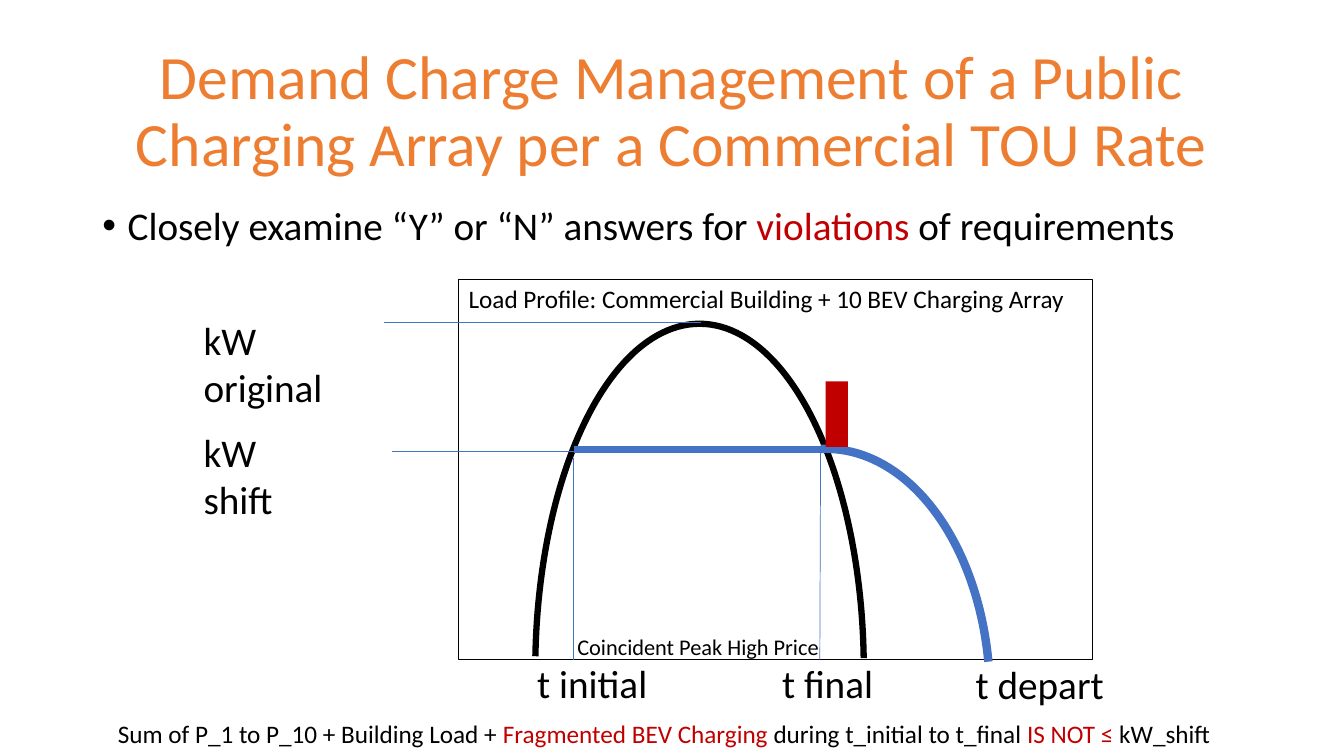
from collections import namedtuple
from lxml.etree import SubElement
from pptx import Presentation
from pptx.dml.color import RGBColor
from pptx.enum.shapes import MSO_CONNECTOR as CONNECTOR, MSO_SHAPE as SHAPE
from pptx.enum.text import MSO_ANCHOR as ANCHOR, PP_ALIGN as ALIGN
from pptx.oxml.ns import qn
from pptx.util import Cm, Pt

BLACK = RGBColor(0x00, 0x00, 0x00)
ORANGE = RGBColor(0xED, 0x7D, 0x31)
RED = RGBColor(0xC0, 0x00, 0x00)
BLUE = RGBColor(0x44, 0x72, 0xC4)

Box = namedtuple("Box", "left top width height")


def inside(box, left, top, width, height):
    return Box(box.left + left, box.top + top, width, height)


def lengths(values):
    return [Cm(value) for value in values]


def set_format(target, values):
    for name, value in values.items():
        setattr(target, name, value)


def add_text(slide, box, runs, size, wrap=True, anchor=ANCHOR.TOP, **paragraph_format):
    frame = slide.shapes.add_textbox(*lengths(box)).text_frame
    set_format(frame, {"word_wrap": wrap, "vertical_anchor": anchor})
    paragraph = frame.paragraphs[0]
    set_format(paragraph, paragraph_format)
    for text, color in runs:
        run = paragraph.add_run()
        run.text = text
        set_format(run.font, {"name": "Calibri", "size": Pt(size)})
        run.font.color.rgb = color
    return paragraph


def add_figure(slide, kind, box, line=None, weight=0, fill=None, angles=()):
    shape = slide.shapes.add_shape(kind, *lengths(box))
    shape.shadow.inherit = False
    for index, angle in enumerate(angles):
        shape.adjustments[index] = angle
    if fill is None:
        shape.fill.background()
    else:
        shape.fill.solid()
        shape.fill.fore_color.rgb = fill
    if line is None:
        shape.line.fill.background()
    else:
        shape.line.color.rgb = line
        shape.line.width = Pt(weight)


def add_line(slide, box, start, end, weight):
    points = [box.left + start[0], box.top + start[1], box.left + end[0], box.top + end[1]]
    connector = slide.shapes.add_connector(CONNECTOR.STRAIGHT, *lengths(points))
    connector.line.color.rgb = BLUE
    connector.line.width = Pt(weight)
    SubElement(connector._element.spPr, qn("a:effectLst"))


def add_title(slide, box):
    title = "Demand Charge Management of a Public Charging Array per a Commercial TOU Rate"
    add_text(slide, box, [(title, ORANGE)], 44, anchor=ANCHOR.MIDDLE,
             alignment=ALIGN.CENTER, line_spacing=0.9)


def add_bullet(slide, box):
    runs = [("Closely examine “Y” or “N” answers for ", BLACK),
            ("violations", RED), (" of requirements", BLACK)]
    paragraph = add_text(slide, box, runs, 28, line_spacing=0.9)
    properties = paragraph._p.get_or_add_pPr()
    properties.set("marL", str(Cm(0.64)))
    properties.set("indent", str(Cm(-0.64)))
    SubElement(properties, qn("a:buFont")).set("typeface", "Arial")
    SubElement(properties, qn("a:buChar")).set("char", "•")


def add_load_profile(slide, box):
    floor = box.height
    start, end, shift = 2.9, 9.1, 4.29
    add_figure(slide, SHAPE.RECTANGLE, box, BLACK, 1)
    add_figure(slide, SHAPE.ARC, inside(box, 1.93, 1.12, 8.28, 17.45),
               BLACK, 4.5, angles=(110.88, 213.51))
    add_line(slide, box, (start, shift), (9.32, shift), 4.5)
    add_figure(slide, SHAPE.ARC, inside(box, 5.11, 4.27, 8.28, 12.47),
               BLUE, 6, angles=(161.31, 208.81))
    for line_start, line_end in [
        ((-1.88, 1.09), (6.1, 1.09)),
        ((-1.68, 4.34), (6.27, 4.34)),
        ((start, floor), (start, 4.5)),
        ((end, floor), (end + 0.02, 4.27)),
    ]:
        add_line(slide, box, line_start, line_end, 0.5)
    add_figure(slide, SHAPE.RECTANGLE, inside(box, 9.25, 2.57, 0.56, 1.65), fill=RED)

    for text, left, top, width, size in [
        ("kW original", -6.68, 0.81, 5.03, 28),
        ("kW shift", -6.68, 3.63, 3.76, 28),
        ("t initial", 1.73, 9.45, 3.33, 28),
        ("t final", 7.9, 9.45, 2.84, 28),
        ("t depart", 12.78, 9.47, 3.78, 28),
        ("Coincident Peak High Price", 2.74, 8.79, 6.68, 16),
    ]:
        height = 1.45 if size == 28 else 0.94
        add_text(slide, inside(box, left, top, width, height), [(text, BLACK)], size, wrap=False)
    heading = "Load Profile: Commercial Building + 10 BEV Charging Array"
    add_text(slide, inside(box, 0, -0.03, box.width, 1.02), [(heading, BLACK)], 18)


def add_conclusion(slide, box):
    add_text(slide, box, [
        ("Sum of P_1 to P_10 + Building Load + ", BLACK),
        ("Fragmented BEV Charging ", RED),
        ("during t_initial to t_final ", BLACK),
        ("IS NOT ≤ ", RED),
        ("kW_shift", BLACK),
    ], 18)


def main():
    presentation = Presentation()
    set_format(presentation, {"slide_width": Cm(33.87), "slide_height": Cm(19.05)})
    slide = presentation.slides.add_slide(presentation.slide_layouts[6])
    add_title(slide, Box(2.33, 1.01, 29.21, 3.68))
    add_bullet(slide, Box(2.33, 5.07, 29.21, 1.4))
    add_load_profile(slide, Box(11.56, 7.04, 15.98, 9.58))
    add_conclusion(slide, Box(2.72, 17.98, 28.42, 1.02))
    presentation.save("out.pptx")


if __name__ == "__main__":
    main()
